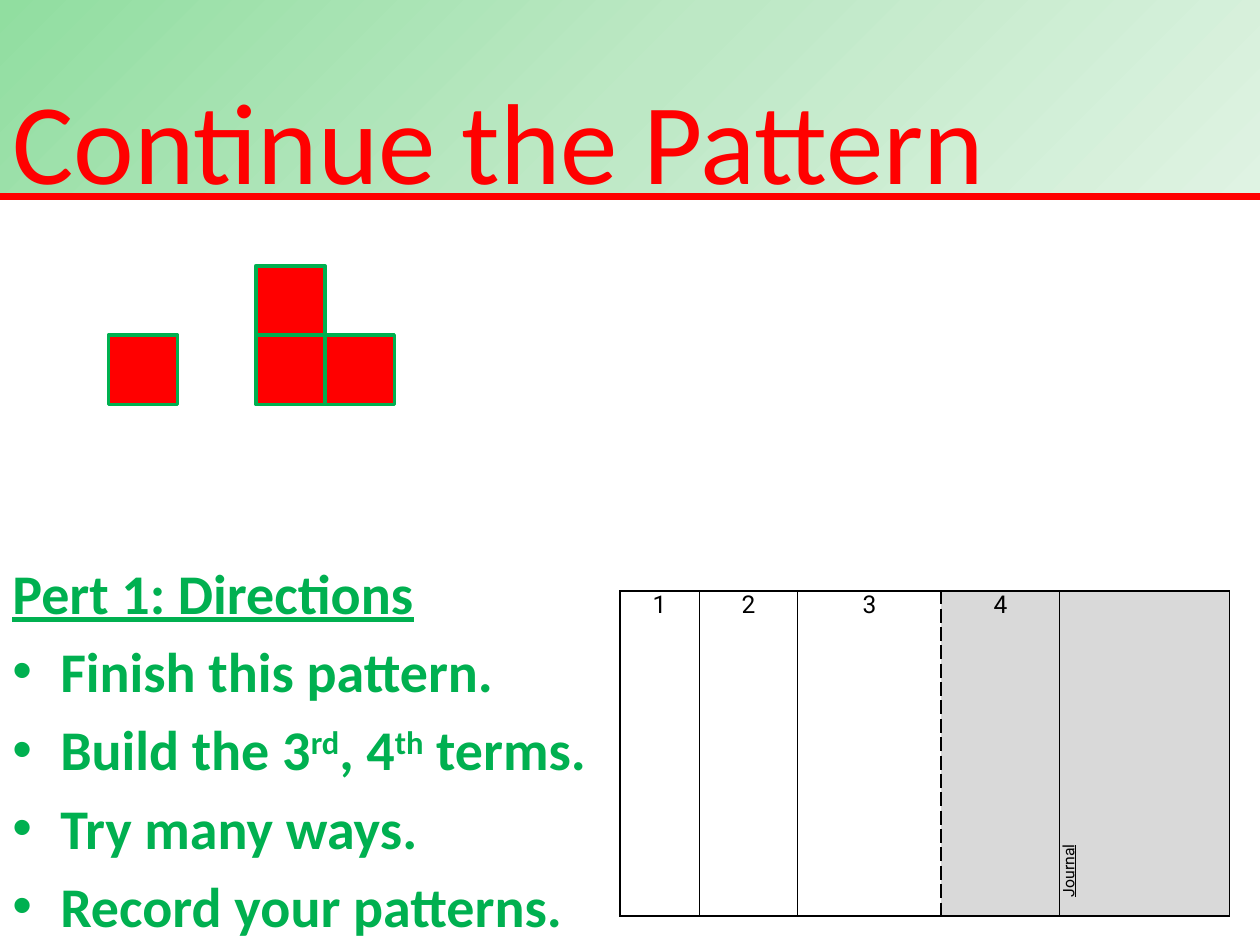
from copy import deepcopy
from dataclasses import dataclass
from typing import Optional

from lxml.etree import SubElement
from pptx import Presentation
from pptx.dml.color import RGBColor
from pptx.enum.shapes import MSO_CONNECTOR, MSO_SHAPE
from pptx.enum.text import MSO_ANCHOR, PP_ALIGN
from pptx.oxml.ns import qn
from pptx.util import Inches, Pt

RED, GREEN, BLACK, GRAY, WHITE = "FF0000", "00B050", "000000", "D9D9D9", "FFFFFF"
SIDE = 0.55
BASE_TOP = 2.66


@dataclass
class Tile:
    left: float
    level: int


@dataclass
class Column:
    text: str
    width: float
    fill: Optional[str] = None
    dash_left: bool = False
    dash_right: bool = False
    vertical: bool = False


TILES = [Tile(0.86, 0), Tile(2.03, 0), Tile(2.03, 1), Tile(2.03 + SIDE, 0)]
COLUMNS = [
    Column("1", 0.63),
    Column("2", 0.78),
    Column("3", 1.14, dash_right=True),
    Column("4", 0.94, GRAY, dash_left=True),
    Column("Journal", 1.35, GRAY, vertical=True),
]
DIRECTIONS = [
    [("Finish this pattern.", 0)],
    [("Build the 3", 0), ("rd", 30), (", 4", 0), ("th", 30), (" terms.", 0)],
    [("Try many ways.", 0)],
    [("Record your patterns.", 0)],
]


def rgb(value: str) -> RGBColor:
    return RGBColor.from_string(value)


def add_text(p, text: str, *, size: float, color: str, font: str = "Calibri",
             bold: bool = False, underline: bool = False, raised: int = 0) -> None:
    r = p.add_run()
    r.text = text
    r.font.size = Pt(size)
    r.font.name = font
    r.font.bold = bold
    r.font.underline = underline
    r.font.color.rgb = rgb(color)
    if raised:
        r.font._element.set("baseline", str(raised * 1000))


def set_insets(target, left: float, top: float, right: float, bottom: float) -> None:
    target.margin_left, target.margin_top = Inches(left), Inches(top)
    target.margin_right, target.margin_bottom = Inches(right), Inches(bottom)


def place(sp, left: float, top: float, width: float, height: float) -> None:
    sp.left, sp.top = Inches(left), Inches(top)
    sp.width, sp.height = Inches(width), Inches(height)


def add_title(s) -> None:
    sp = s.shapes.title
    place(sp, 0, 0, 10, 1.56)
    sp.fill.gradient()
    sp.fill.gradient_angle = 315
    stops = sp._element.spPr.find(qn("a:gradFill")).find(qn("a:gsLst"))
    stops.append(deepcopy(stops[-1]))
    for stop, position, color in zip(sp.fill.gradient_stops, (0, 0.5, 1),
                                     ("91DEA0", "BDE8C5", "DFF3E3")):
        stop.position = position
        stop.color.rgb = rgb(color)
    tf = sp.text_frame
    tf.word_wrap = True
    tf.vertical_anchor = MSO_ANCHOR.TOP
    set_insets(tf, 0.1, 0.55, 0.1, 0)
    p = tf.paragraphs[0]
    p.alignment = PP_ALIGN.LEFT
    add_text(p, "Continue the Pattern", size=65.7, color=RED)


def add_directions(s) -> None:
    sp = s.shapes.add_textbox(Inches(0), Inches(4.38), Inches(4.92), Inches(3.12))
    tf = sp.text_frame
    tf.word_wrap = True
    add_text(tf.paragraphs[0], "Pert 1: Directions", size=32, color=GREEN,
             bold=True, underline=True)
    for parts in DIRECTIONS:
        p = tf.add_paragraph()
        p.space_before = Pt(6.4)
        pPr = p._p.get_or_add_pPr()
        pPr.set("marL", str(Inches(0.38)))
        pPr.set("indent", str(-Inches(0.38)))
        SubElement(pPr, qn("a:buFont"), typeface="Arial")
        SubElement(pPr, qn("a:buChar"), char="•")
        for text, raised in parts:
            add_text(p, text, size=32, color=GREEN, bold=True, raised=raised)


def add_rule(s) -> None:
    line = s.shapes.add_connector(MSO_CONNECTOR.STRAIGHT, Inches(0), Inches(1.56),
                                  Inches(10), Inches(1.56))
    line.line.color.rgb = rgb(RED)
    line.line.width = Pt(4)
    SubElement(line._element.spPr, qn("a:effectLst"))


def add_tile(s, tile: Tile) -> None:
    top = BASE_TOP - tile.level * SIDE
    sp = s.shapes.add_shape(MSO_SHAPE.RECTANGLE, Inches(tile.left), Inches(top),
                            Inches(SIDE), Inches(SIDE))
    sp.shadow.inherit = False
    sp.fill.solid()
    sp.fill.fore_color.rgb = rgb(RED)
    sp.line.color.rgb = rgb(GREEN)
    sp.line.width = Pt(2)


def add_border(tcPr, side: str, dashed: bool) -> None:
    ln = SubElement(tcPr, qn(f"a:{side}"), w=str(Pt(1)))
    fill = SubElement(ln, qn("a:solidFill"))
    SubElement(fill, qn("a:srgbClr"), val=BLACK)
    SubElement(ln, qn("a:prstDash"), val="dash" if dashed else "solid")


def fill_cell(cell, column: Column) -> None:
    set_insets(cell, 0.07, 0, 0.07, 0)
    p = cell.text_frame.paragraphs[0]
    tcPr = cell._tc.get_or_add_tcPr()
    if column.vertical:
        tcPr.set("vert", "vert270")
        p._p.get_or_add_pPr().set("marL", str(Inches(0.08)))
    else:
        p.alignment = PP_ALIGN.CENTER
    add_text(p, column.text, size=9 if column.vertical else 14, color=BLACK,
             font="Roboto", underline=column.vertical)
    for side, dashed in (("lnL", column.dash_left), ("lnR", column.dash_right),
                         ("lnT", False), ("lnB", False)):
        add_border(tcPr, side, dashed)
    cell.fill.solid()
    cell.fill.fore_color.rgb = rgb(column.fill or WHITE)


def add_journal_table(s) -> None:
    width = sum(column.width for column in COLUMNS)
    table = s.shapes.add_table(1, len(COLUMNS), Inches(4.92), Inches(4.69),
                               Inches(width), Inches(2.58)).table
    table.first_row = False
    table.horz_banding = False
    for i, column in enumerate(COLUMNS):
        table.columns[i].width = Inches(column.width)
        fill_cell(table.cell(0, i), column)


def main() -> None:
    prs = Presentation()
    prs.slide_width, prs.slide_height = Inches(10), Inches(7.5)
    s = prs.slides.add_slide(prs.slide_layouts[5])
    add_title(s)
    add_directions(s)
    add_rule(s)
    for tile in TILES:
        add_tile(s, tile)
    add_journal_table(s)
    prs.save("out.pptx")


if __name__ == "__main__":
    main()
